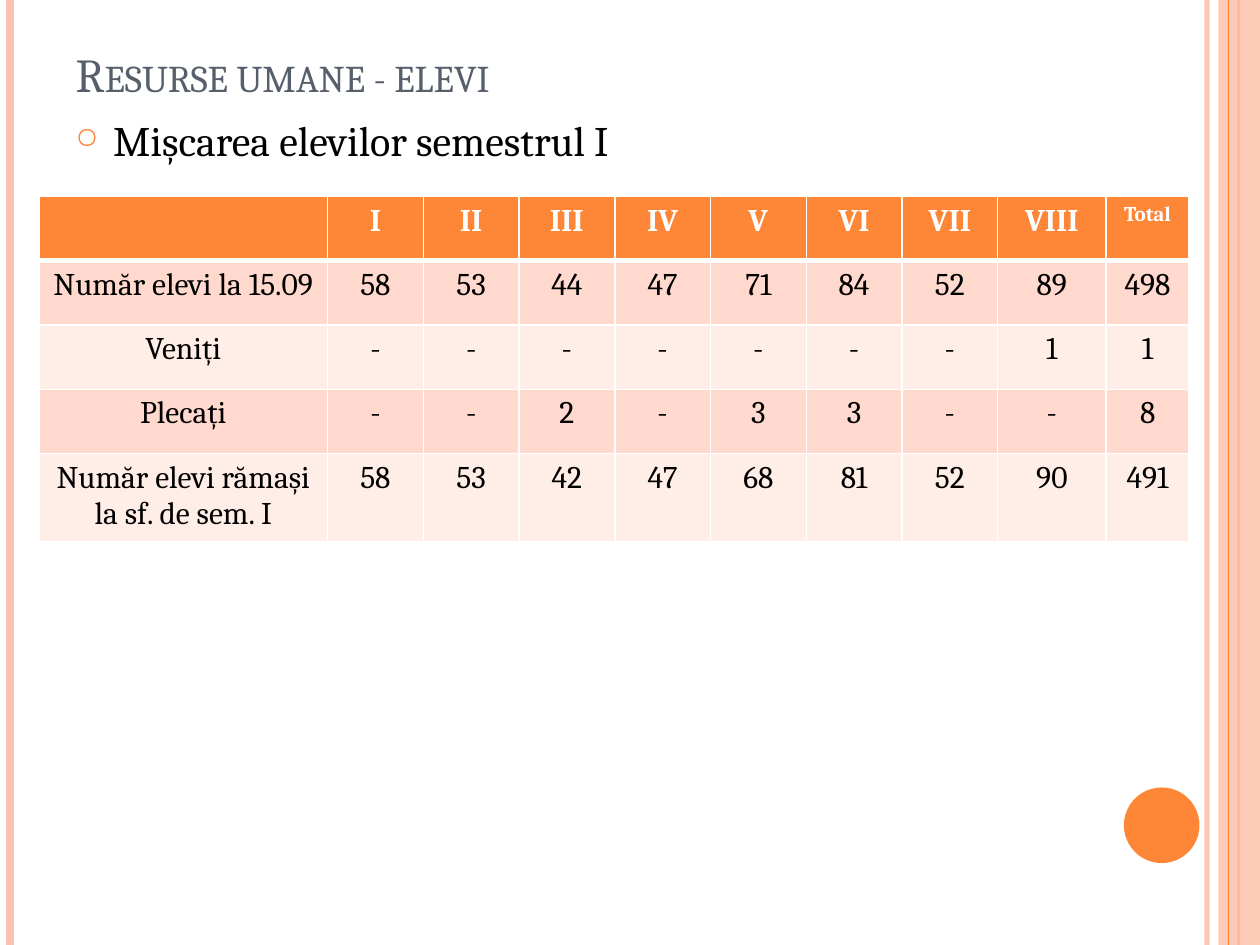
from lxml import etree
from pptx import Presentation
from pptx.dml.color import RGBColor
from pptx.enum.shapes import MSO_CONNECTOR, MSO_SHAPE
from pptx.enum.text import MSO_ANCHOR, MSO_AUTO_SIZE, PP_ALIGN
from pptx.oxml.ns import qn
from pptx.util import Inches, Pt

STRAIGHT = MSO_CONNECTOR.STRAIGHT
RECTANGLE, OVAL = MSO_SHAPE.RECTANGLE, MSO_SHAPE.OVAL
CENTER, LEFT = PP_ALIGN.CENTER, PP_ALIGN.LEFT
BOTTOM, NO_AUTOFIT = MSO_ANCHOR.BOTTOM, MSO_AUTO_SIZE.NONE

ORANGE = RGBColor(0xFE, 0x86, 0x37)
PEACH = RGBColor(0xFE, 0xC3, 0xAE)
SLATE = RGBColor(0x57, 0x5F, 0x6D)
BLACK = RGBColor(0, 0, 0)
WHITE = RGBColor(0xFF, 0xFF, 0xFF)
ODD_ROW = RGBColor(0xFF, 0xD9, 0xCE)
EVEN_ROW = RGBColor(0xFF, 0xED, 0xE8)

FONT = "Cambria"
SLIDE_WIDTH, SLIDE_HEIGHT = 10, 7.5
COLUMN_WIDTHS = [2.29] + [0.76] * 7 + [0.86, 0.66]
ROW_HEIGHT = 0.51
PUPIL_ROWS = [
    ["", "I", "II", "III", "IV", "V", "VI", "VII", "VIII", "Total"],
    ["Număr elevi la 15.09", "58", "53", "44", "47", "71", "84", "52", "89", "498"],
    ["Veniți", "-", "-", "-", "-", "-", "-", "-", "1", "1"],
    ["Plecați", "-", "-", "2", "-", "3", "3", "-", "-", "8"],
    ["Număr elevi rămași la sf. de sem. I",
     "58", "53", "42", "47", "68", "81", "52", "90", "491"],
]


def add_child(parent, tag, **attributes):
    return etree.SubElement(parent, qn(tag), attributes)


def set_opacity(element, percent):
    color = next(element.iter(qn("a:srgbClr")))
    add_child(color, "a:alpha", val=str(percent * 1000))


def write(paragraph, text, align=LEFT, **font_format):
    paragraph.alignment = align
    run = paragraph.add_run()
    run.text = text
    color = font_format.pop("color")
    for attribute, value in {"name": FONT, **font_format}.items():
        setattr(run.font, attribute, value)
    run.font.color.rgb = color
    return run


def add_stripe(slide, x, color, width, opacity=100):
    """Draw a vertical line over the full slide height."""
    stripe = slide.shapes.add_connector(
        STRAIGHT, Inches(x), 0, Inches(x), Inches(SLIDE_HEIGHT))
    stripe.line.color.rgb = color
    stripe.line.width = Pt(width)
    properties = stripe._element.spPr
    add_child(properties, "a:effectLst")
    if opacity < 100:
        set_opacity(properties, opacity)


def add_filled_shape(slide, kind, box, color, opacity=100):
    shape = slide.shapes.add_shape(kind, *map(Inches, box))
    shape.shadow.inherit = False
    shape.fill.solid()
    shape.fill.fore_color.rgb = color
    shape.line.fill.background()
    if opacity < 100:
        set_opacity(shape._element.spPr, opacity)


def add_decoration(slide):
    add_stripe(slide, 9.58, PEACH, 3, opacity=93)
    add_stripe(slide, 0.08, PEACH, 4.5)
    add_stripe(slide, 9.83, ORANGE, 1.5)
    add_filled_shape(slide, RECTANGLE, (9.67, 0, 0.33, SLIDE_HEIGHT), PEACH, opacity=87)
    add_stripe(slide, 9.75, ORANGE, 0.75)
    add_filled_shape(slide, OVAL, (8.92, 6.25, 0.6, 0.6), ORANGE)


def set_title(slide, text):
    title = slide.shapes.title
    title.left, title.top, title.width, title.height = map(
        Inches, (0.5, 0.3, 8.17, 0.56))
    frame = title.text_frame
    frame.auto_size = NO_AUTOFIT
    frame.vertical_anchor = BOTTOM
    run = write(frame.paragraphs[0], text, size=Pt(27), color=SLATE)
    run.font._element.set("cap", "small")


def add_bullet_text(slide, text):
    frame = slide.shapes.add_textbox(
        *map(Inches, (0.5, 0.86, 8.17, 6.22))).text_frame
    frame.word_wrap = True
    paragraph = frame.paragraphs[0]
    paragraph.space_before = Pt(6)
    properties = paragraph._p.get_or_add_pPr()
    indent = Inches(0.3)
    properties.set("marL", str(indent))
    properties.set("indent", str(-indent))
    add_child(add_child(properties, "a:buClr"), "a:srgbClr", val=str(ORANGE))
    add_child(properties, "a:buSzPct", val="70000")
    add_child(properties, "a:buChar", char="○")
    write(paragraph, text, size=Pt(24), color=BLACK)


def set_borders(cell, top, bottom):
    """Give the cell white borders; top and bottom are widths in points."""
    properties = cell._tc.get_or_add_tcPr()
    for side, width in {"L": 1, "R": 1, "T": top, "B": bottom}.items():
        border = add_child(properties, f"a:ln{side}", w=str(Pt(width)))
        add_child(add_child(border, "a:solidFill"), "a:srgbClr", val=str(WHITE))


def fill_cell(cell, text, row):
    is_header = row == 0
    set_borders(cell, top=3 if row == 1 else 1, bottom=3 if is_header else 1)
    cell.fill.solid()
    cell.fill.fore_color.rgb = (
        ORANGE if is_header else ODD_ROW if row % 2 else EVEN_ROW)
    if text:
        write(cell.text_frame.paragraphs[0], text, CENTER,
              size=Pt(12 if text == "Total" else 18),
              bold=is_header, color=WHITE if is_header else BLACK)


def add_pupil_table(slide):
    row_count = len(PUPIL_ROWS)
    table = slide.shapes.add_table(
        row_count, len(COLUMN_WIDTHS), Inches(0.31), Inches(1.56),
        Inches(sum(COLUMN_WIDTHS)), Inches(ROW_HEIGHT * row_count)).table
    for column, width in zip(table.columns, COLUMN_WIDTHS):
        column.width = Inches(width)
    for row, texts in enumerate(PUPIL_ROWS):
        table.rows[row].height = Inches(ROW_HEIGHT)
        for column, text in enumerate(texts):
            fill_cell(table.cell(row, column), text, row)


def main():
    presentation = Presentation()
    presentation.slide_width = Inches(SLIDE_WIDTH)
    presentation.slide_height = Inches(SLIDE_HEIGHT)
    slide = presentation.slides.add_slide(presentation.slide_layouts[5])
    add_decoration(slide)
    set_title(slide, "Resurse umane - elevi")
    add_bullet_text(slide, "Mișcarea elevilor semestrul I")
    add_pupil_table(slide)
    presentation.save("out.pptx")


if __name__ == "__main__":
    main()
